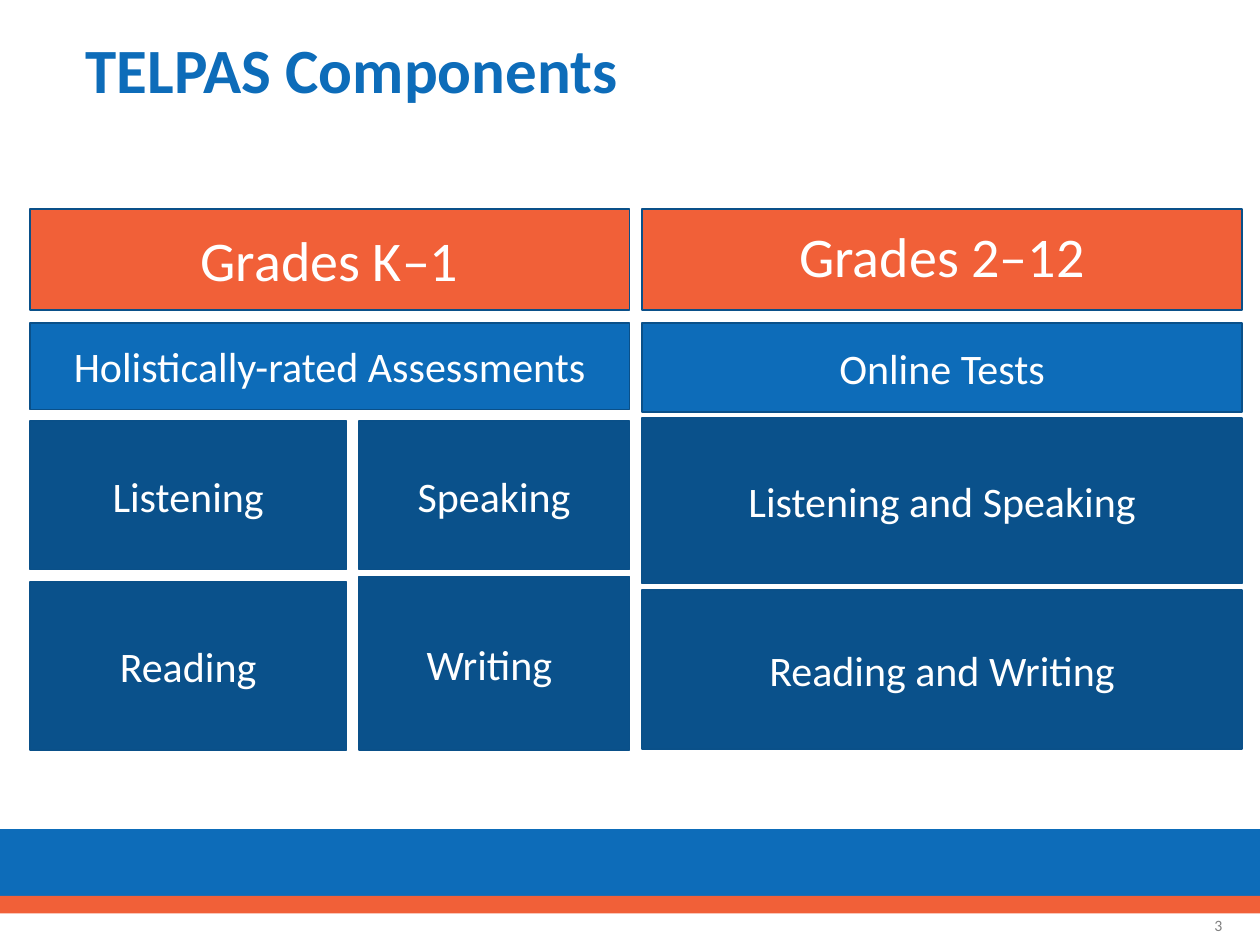
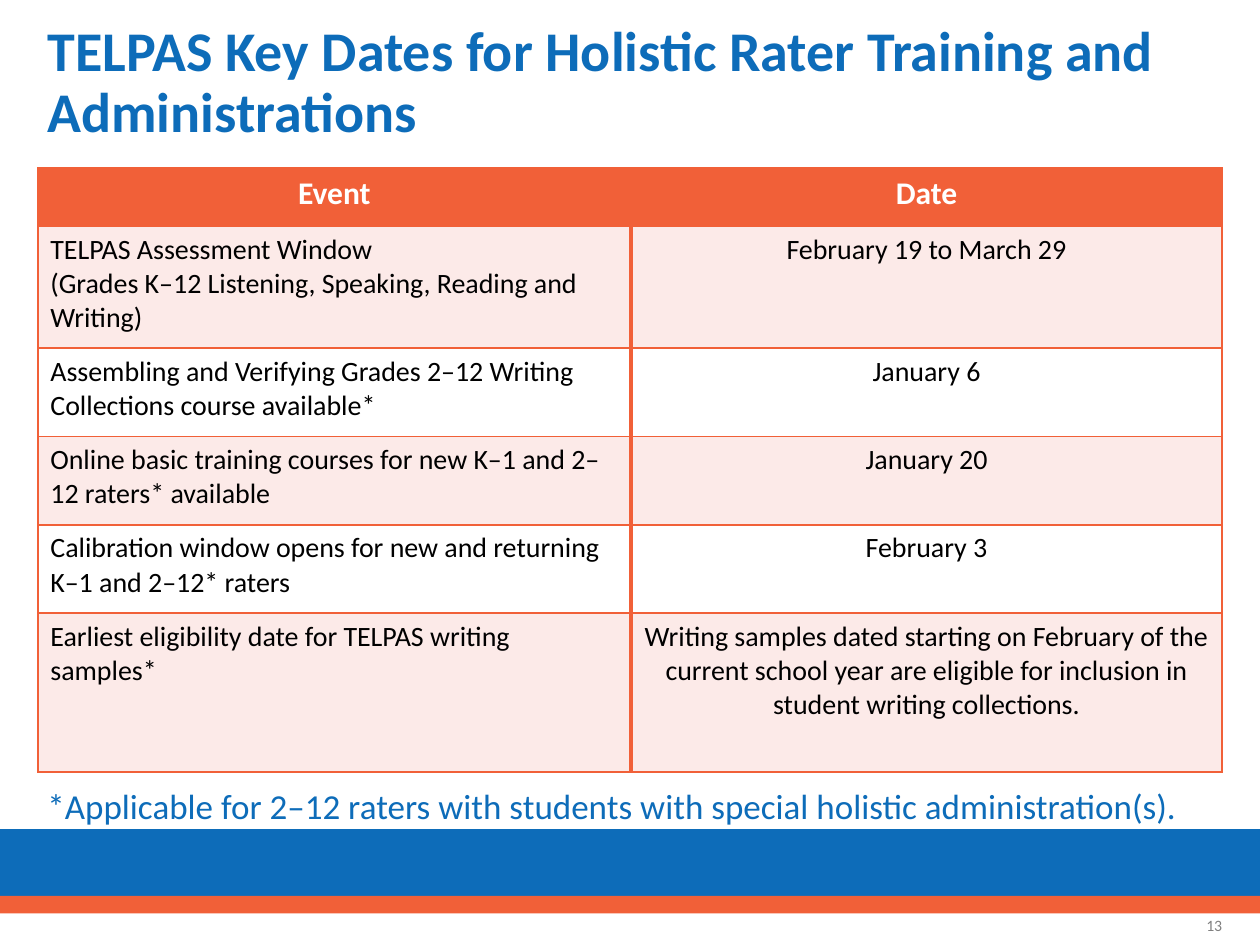
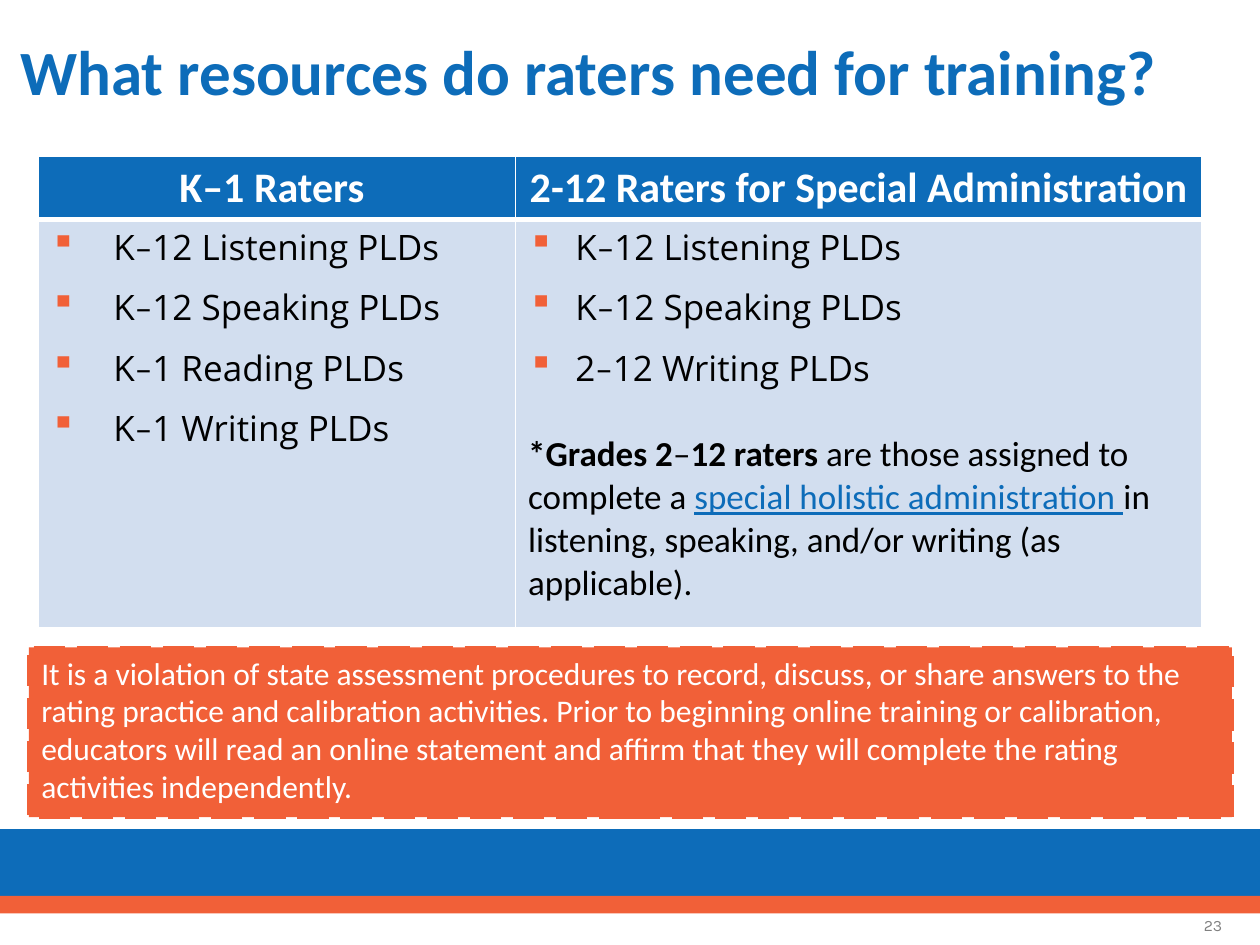
from dataclasses import dataclass

from lxml.etree import SubElement
from pptx import Presentation
from pptx.dml.color import RGBColor
from pptx.enum.dml import MSO_LINE
from pptx.enum.shapes import MSO_SHAPE
from pptx.enum.text import MSO_ANCHOR, PP_ALIGN
from pptx.oxml.ns import qn
from pptx.util import Pt


@dataclass(frozen=True)
class Theme:
    blue: str = "0D6CB9"
    orange: str = "F16038"
    navy: str = "0A518B"
    outline: str = "0A5089"
    blush: str = "FCEAE8"
    pale_blue: str = "D2DEEF"
    white: str = "FFFFFF"
    black: str = "000000"
    grey: str = "808080"
    font: str = "Calibri"
    list_font: str = "Open Sans"
    title: int = 36
    long_title: int = 32
    grade: int = 32
    large: int = 24
    body: int = 20
    medium: int = 18
    small: int = 16
    number: int = 9
    tight: float = 0.9


THEME = Theme()

DATES = [
    ("Event", "Date"),
    ("TELPAS Assessment Window\n(Grades K–12 Listening, Speaking, Reading and Writing)",
     "February 19 to March 29"),
    ("Assembling and Verifying Grades 2–12 Writing Collections course available*", "January 6"),
    ("Online basic training courses for new K–1 and 2–12 raters* available", "January 20"),
    ("Calibration window opens for new and returning K–1 and 2–12* raters", "February 3"),
    ("Earliest eligibility date for TELPAS writing samples*",
     "Writing samples dated starting on February of the current school year are eligible "
     "for inclusion in student writing collections."),
]


def rgb(color):
    return RGBColor.from_string(color)


def style_run(run, size, color, bold=False, font=THEME.font):
    run.font.name = font
    run.font.size = Pt(size)
    run.font.bold = bold
    run.font.color.rgb = rgb(color)


def write(frame, text, size, color, bold=False, align=PP_ALIGN.LEFT, spacing=None, font=THEME.font):
    frame.text = text
    frame.word_wrap = True
    for paragraph in frame.paragraphs:
        paragraph.alignment = align
        if spacing:
            paragraph.line_spacing = spacing
        for run in paragraph.runs:
            style_run(run, size, color, bold, font)


def add_text(slide, box, text, size, color, anchor=MSO_ANCHOR.MIDDLE, **style):
    frame = slide.shapes.add_textbox(*map(Pt, box)).text_frame
    frame.vertical_anchor = anchor
    write(frame, text, size, color, **style)


def add_panel(slide, box, fill, line=None, line_width=1):
    panel = slide.shapes.add_shape(MSO_SHAPE.RECTANGLE, *map(Pt, box))
    panel.shadow.inherit = False
    panel.fill.solid()
    panel.fill.fore_color.rgb = rgb(fill)
    if line:
        panel.line.color.rgb = rgb(line)
        panel.line.width = Pt(line_width)
    else:
        panel.line.fill.background()
    return panel


def start_slide(deck, title, title_box, number, title_size=THEME.title, number_font=THEME.font):
    """Add a slide with the shared bands, title and page number."""
    slide = deck.slides.add_slide(deck.slide_layouts[6])
    add_panel(slide, (0, 473.75, 720, 41.75), THEME.blue)
    add_panel(slide, (0, 512, 720, 10), THEME.orange)
    add_text(slide, title_box, title, title_size, THEME.blue, bold=True, spacing=THEME.tight)
    add_text(slide, (543.5, 514, 162, 29), number, THEME.number, THEME.grey,
             align=PP_ALIGN.RIGHT, font=number_font)
    return slide


def add_border(cell, side, color, width):
    line = SubElement(cell._tc.get_or_add_tcPr(), qn(f"a:ln{side}"), w=str(Pt(width)))
    SubElement(SubElement(line, qn("a:solidFill")), qn("a:srgbClr"), val=color)


def add_grid(slide, left, top, widths, heights, fills, rule, column_rule=1, header_rule=1):
    """Add a table with one fill per row; inner column and header rules have their own widths."""
    box = map(Pt, (left, top, sum(widths), sum(heights)))
    table = slide.shapes.add_table(len(heights), len(widths), *box).table
    table.horz_banding = False
    for column, width in zip(table.columns, widths):
        column.width = Pt(width)
    for r, (height, fill) in enumerate(zip(heights, fills)):
        table.rows[r].height = Pt(height)
        for c in range(len(widths)):
            cell = table.cell(r, c)
            add_border(cell, "L", rule, column_rule if c else 1)
            add_border(cell, "R", rule, column_rule if c < len(widths) - 1 else 1)
            add_border(cell, "T", rule, header_rule if r == 1 else 1)
            add_border(cell, "B", rule, header_rule if r == 0 else 1)
            cell.fill.solid()
            cell.fill.fore_color.rgb = rgb(fill)
    return table


def add_grade_block(slide, left, top, grade, grade_spacing, method, method_height, columns):
    """Stack grade, method and skill tiles; columns hold (x, width, [(skill, y, height)])."""
    width = 342.75

    def tile(text, x, y, w, h, fill, size=THEME.large, spacing=None):
        panel = add_panel(slide, (left + x, top + y, w, h), fill, THEME.outline)
        panel.text_frame.vertical_anchor = MSO_ANCHOR.MIDDLE
        write(panel.text_frame, text, size, THEME.white, align=PP_ALIGN.CENTER, spacing=spacing)

    tile(grade, 0, 0, width, 57.5, THEME.orange, THEME.grade, grade_spacing)
    tile(method, 0, 65, width, method_height, THEME.blue)
    for x, column_width, skills in columns:
        for skill, y, height in skills:
            tile(skill, x, y, column_width, height, THEME.navy)


def build_components(deck):
    slide = start_slide(deck, "TELPAS Components", (42, 12.25, 656.5, 59), "3")
    top = 119.5
    add_grade_block(slide, 17, top, "Grades K–1", None, "Holistically-rated Assessments", 49.5, [
        (0, 181, [("Listening", 121, 85), ("Reading", 213, 96)]),
        (188, 154.75, [("Speaking", 121, 85), ("Writing ", 210, 99)]),
    ])
    add_grade_block(slide, 367, top, "Grades 2–12", THEME.tight, "Online Tests", 51, [
        (0, 342.75, [("Listening and Speaking", 119.5, 94.5), ("Reading and Writing", 217.5, 91)]),
    ])


def build_key_dates(deck):
    slide = start_slide(deck, "TELPAS Key Dates for Holistic Rater Training and Administrations",
                        (20, 20, 686, 56), "13", THEME.long_title)
    fills = [THEME.orange] + [THEME.blush, THEME.white] * 2 + [THEME.blush]
    table = add_grid(slide, 21.6, 96, (339, 337.75), (33.25, 69.75, 50.5, 50.5, 50.5, 90.75),
                     fills, THEME.orange, column_rule=2.25)
    for r, row in enumerate(DATES):
        header = r == 0
        for c, text in enumerate(row):
            write(table.cell(r, c).text_frame, text,
                  THEME.medium if header else THEME.small,
                  THEME.white if header else THEME.black, bold=header,
                  align=PP_ALIGN.CENTER if header or c else PP_ALIGN.LEFT)
    add_text(slide, (20, 445, 660, 55),
             "*Applicable for 2–12 raters with students with special holistic administration(s).",
             THEME.body, THEME.blue, anchor=MSO_ANCHOR.TOP)


def add_bullet(paragraph, indent):
    properties = paragraph._p.get_or_add_pPr()
    properties.set("marL", str(Pt(indent)))
    properties.set("indent", str(-Pt(indent)))
    SubElement(SubElement(properties, qn("a:buClr")), qn("a:srgbClr"), val=THEME.orange)
    SubElement(properties, qn("a:buChar"), char="▪")


def write_resources(frame, resources, indent):
    """Write a bulleted list whose dashes are set in the main font."""
    for i, resource in enumerate(resources):
        paragraph = frame.paragraphs[0] if i == 0 else frame.add_paragraph()
        add_bullet(paragraph, indent)
        paragraph.line_spacing = THEME.tight
        if i:
            paragraph.space_before = Pt(10)
        grade, rest = resource.split("–")
        for text, font in ((grade, THEME.list_font), ("–", THEME.font), (rest, THEME.list_font)):
            run = paragraph.add_run()
            run.text = text
            style_run(run, THEME.body, THEME.black, font=font)


def add_rater_note(frame):
    note = frame.add_paragraph()
    note.space_before = Pt(25)
    for text, bold, linked in (
        ("*Grades 2", True, False),
        ("–", False, False),
        ("12 raters ", True, False),
        ("are those assigned to complete a ", False, False),
        ("special holistic administration ", False, True),
        ("in listening, speaking, and/or writing (as applicable).", False, False),
    ):
        run = note.add_run()
        run.text = text
        style_run(run, THEME.body, THEME.blue if linked else THEME.black, bold)
        run.font.underline = linked


def build_resources(deck):
    slide = start_slide(deck, "What resources do raters need for training?",
                        (4.5, 8, 699, 70), "23", number_font="Karla")
    table = add_grid(slide, 21.6, 89.5, (273, 392.25), (36, 233), (THEME.blue, THEME.pale_blue),
                     THEME.white, header_rule=3)
    for c, heading in enumerate(("K–1 Raters ", "2-12 Raters for Special Administration")):
        write(table.cell(0, c).text_frame, heading, THEME.large, THEME.white, bold=True,
              align=PP_ALIGN.CENTER)
    shared = ["K–12 Listening PLDs", "K–12 Speaking PLDs"]
    write_resources(table.cell(1, 0).text_frame,
                    shared + ["K–1 Reading PLDs", "K–1 Writing PLDs"], 36)
    special = table.cell(1, 1).text_frame
    write_resources(special, shared + ["2–12 Writing PLDs"], 27)
    add_rater_note(special)

    warning = add_panel(slide, (16.5, 370, 687.5, 97), THEME.orange, THEME.orange, 2.25)
    warning.line.dash_style = MSO_LINE.LONG_DASH
    warning.text_frame.vertical_anchor = MSO_ANCHOR.TOP
    write(warning.text_frame,
          "It is a violation of state assessment procedures to record, discuss, or share answers "
          "to the rating practice and calibration activities. Prior to beginning online training "
          "or calibration, educators will read an online statement and affirm that they will "
          "complete the rating activities independently.", THEME.medium, THEME.white)


def main():
    deck = Presentation()
    deck.slide_width, deck.slide_height = Pt(720), Pt(540)
    build_components(deck)
    build_key_dates(deck)
    build_resources(deck)
    deck.save("out.pptx")


if __name__ == "__main__":
    main()
